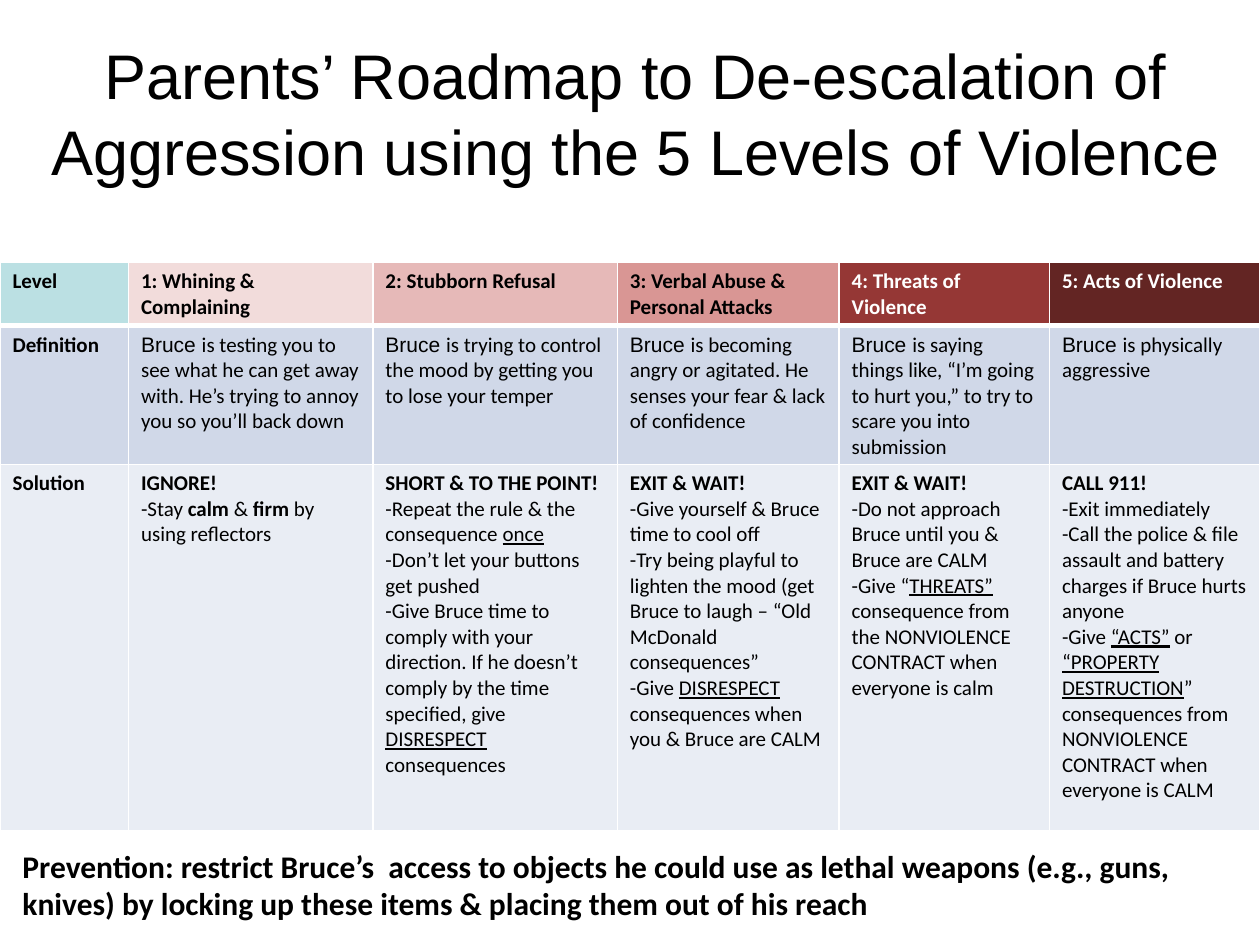
from lxml import etree
from pptx import Presentation
from pptx.dml.color import RGBColor
from pptx.enum.text import MSO_ANCHOR, PP_ALIGN
from pptx.oxml.ns import qn
from pptx.util import Inches, Pt

CENTER, LEFT = PP_ALIGN.CENTER, PP_ALIGN.LEFT
MIDDLE, TOP = MSO_ANCHOR.MIDDLE, MSO_ANCHOR.TOP
COLORS = {
    "black": "000000", "white": "FFFFFF", "corner": "BBE0E3",
    "level1": "F2DCDB", "level2": "E6B9B8", "level3": "D99694",
    "level4": "953735", "level5": "632523",
    "definition": "D0D8E8", "solution": "E9EDF4",
}
HEADING, BODY = "Arial", "Calibri"
BOLD, UNDERLINE = "*", "_"

LEVELS = [
    ("1: Whining & Complaining", "level1", "black",
     "is testing you to see what he can get away with. He’s trying to annoy you so you’ll back down",
     ["*IGNORE!*", "-Stay *calm* & *firm* by using reflectors"]),
    ("2: Stubborn Refusal", "level2", "black",
     "is trying to control the mood by getting you to lose your temper",
     ["*SHORT & TO THE POINT!*",
      "-Repeat the rule & the consequence _once_",
      "-Don’t let your buttons get pushed",
      "-Give Bruce time to comply with your direction. If he doesn’t comply "
      "by the time specified, give _DISRESPECT_ consequences"]),
    ("3: Verbal Abuse & Personal Attacks", "level3", "black",
     "is becoming angry or agitated. He senses your fear & lack of confidence",
     ["*EXIT & WAIT!*",
      "-Give yourself & Bruce time to cool off",
      "-Try being playful to lighten the mood (get Bruce to laugh – “Old McDonald consequences”",
      "-Give _DISRESPECT_ consequences when you & Bruce are CALM"]),
    ("4: Threats of Violence", "level4", "white",
     "is saying things like, “I’m going to hurt you,” to try to scare you into submission",
     ["*EXIT & WAIT!*",
      "-Do not approach Bruce until you & Bruce are CALM",
      "-Give “_THREATS”_ consequence from the NONVIOLENCE CONTRACT when everyone is calm"]),
    ("5: Acts of Violence", "level5", "white",
     "is physically aggressive",
     ["*CALL 911!*",
      "-Exit immediately",
      "-Call the police & file assault and battery charges if Bruce hurts anyone",
      "-Give _“ACTS”_ or _“PROPERTY DESTRUCTION_” consequences from "
      "NONVIOLENCE CONTRACT when everyone is CALM"]),
]


class RoadmapSlide:
    def __init__(self, width, height):
        self.deck = Presentation()
        self.deck.slide_width, self.deck.slide_height = Inches(width), Inches(height)
        self.slide = self.deck.slides.add_slide(self.deck.slide_layouts[6])

    def across(self, percent):
        return round(self.deck.slide_width * percent / 100)

    def down(self, percent):
        return round(self.deck.slide_height * percent / 100)

    def style(self, run, size, color="black", bold=False, underline=False, font=BODY):
        run.font.name, run.font.size = font, Pt(size)
        run.font.bold, run.font.underline = bold, underline
        run.font.color.rgb = RGBColor.from_string(COLORS[color])

    def text(self, words, x, y, w, h, size, font=BODY, bold=False, align=LEFT, anchor=TOP):
        frame = self.slide.shapes.add_textbox(
            self.across(x), self.down(y), self.across(w), self.down(h)).text_frame
        frame.word_wrap, frame.vertical_anchor = True, anchor
        frame.text = words
        line = frame.paragraphs[0]
        line.alignment = align
        self.style(line.runs[0], size, bold=bold, font=font)

    def table(self, x, y, columns, rows):
        grid = self.slide.shapes.add_table(
            len(rows), len(columns), self.across(x), self.down(y),
            self.across(sum(columns)), self.down(sum(rows))).table
        for column, share in zip(grid.columns, columns):
            column.width = self.across(share)
        for row, share in zip(grid.rows, rows):
            row.height = self.down(share)
        return grid

    def cell(self, cell, lines, fill, color="black", lead="", top=1, bottom=1):
        for side, weight in (("L", 1), ("R", 1), ("T", top), ("B", bottom)):
            border = etree.SubElement(cell._tc.get_or_add_tcPr(), qn(f"a:ln{side}"),
                                      w=str(Pt(weight)))
            paint = etree.SubElement(border, qn("a:solidFill"))
            etree.SubElement(paint, qn("a:srgbClr"), val=COLORS["white"])
        cell.fill.solid()
        cell.fill.fore_color.rgb = RGBColor.from_string(COLORS[fill])
        frame = cell.text_frame
        for number, line in enumerate(lines):
            paragraph = frame.add_paragraph() if number else frame.paragraphs[0]
            if lead:
                paragraph.text = lead
                self.style(paragraph.runs[0], 12, color, font=HEADING)
            for b, part in enumerate(line.split(BOLD)):
                for u, words in enumerate(part.split(UNDERLINE)):
                    if words:
                        run = paragraph.add_run()
                        run.text = words
                        self.style(run, 12, color, b % 2 == 1, u % 2 == 1)


def main():
    page = RoadmapSlide(10, 7.5)
    page.text("Parents’ Roadmap to De-escalation of Aggression using the 5 Levels of Violence",
              2.1, 1.07, 96.7, 21.6, 36, HEADING, align=CENTER, anchor=MIDDLE)

    roadmap = page.table(0, 27.8, [10.2, 19.4, 19.4, 17.6, 16.7, 16.7], [6.67, 14.67, 38.8])
    page.cell(roadmap.cell(0, 0), ["*Level*"], "corner", bottom=3)
    page.cell(roadmap.cell(1, 0), ["*Definition*"], "definition", top=3)
    page.cell(roadmap.cell(2, 0), ["*Solution*"], "solution")
    for column, (level, fill, color, definition, solution) in enumerate(LEVELS, 1):
        page.cell(roadmap.cell(0, column), [f"*{level}*"], fill, color, bottom=3)
        page.cell(roadmap.cell(1, column), [definition], "definition", lead="Bruce ", top=3)
        page.cell(roadmap.cell(2, column), solution, "solution")

    page.text("Prevention: restrict Bruce’s  access to objects he could use as lethal weapons "
              "(e.g., guns, knives) by locking up these items & placing them out of his reach",
              0.8, 88.93, 99.2, 9.33, 18, bold=True)
    page.deck.save("out.pptx")


if __name__ == "__main__":
    main()
